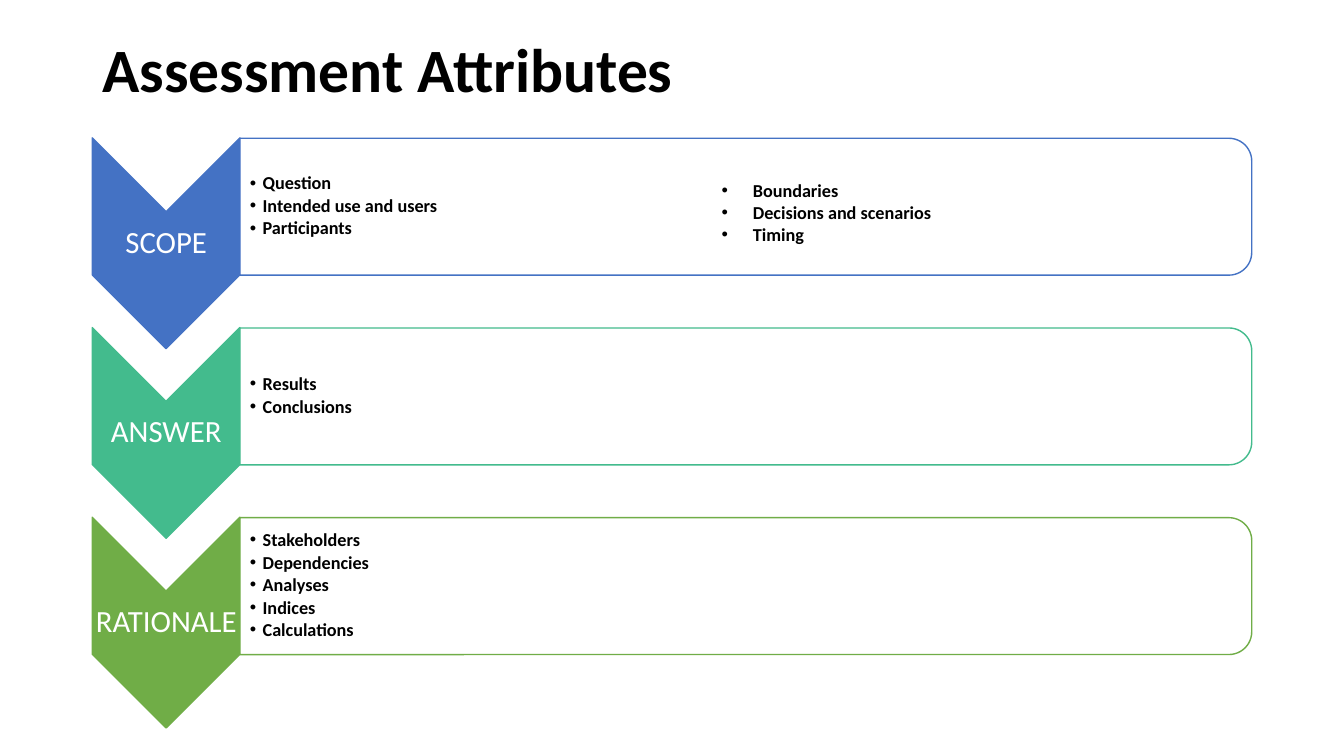
from lxml import etree
from pptx import Presentation, util as u
from pptx.dml.color import RGBColor
from pptx.enum import shapes, text
from pptx.oxml import ns

ROW_PITCH = 4.78
SECTIONS = [
    ("SCOPE", "4472C4", ["Question", "Intended use and users", "Participants"]),
    ("ANSWER", "43BB8D", ["Results", "Conclusions"]),
    ("RATIONALE", "70AD47",
     ["Stakeholders", "Dependencies", "Analyses", "Indices", "Calculations"]),
]
SCOPE_LIMITS = ["Boundaries", "Decisions and scenarios", "Timing"]


def add_turned_shape(preset, box, fill, line):
    """Add a preset shape turned a quarter clockwise; box is in cm before turning."""
    shape = slide.shapes.add_shape(preset, *map(u.Cm, box))
    shape.rotation = 90
    shape.shadow.inherit = False
    shape.fill.solid()
    shape.fill.fore_color.rgb = RGBColor.from_string(fill)
    shape.line.color.rgb = RGBColor.from_string(line)
    shape.line.width = u.Pt(1)
    return shape


def write_list(placeholder, items, box, indent, line_spacing, space_after):
    """Fill a placeholder with bullets, place it (cm) and bring it to the front."""
    placeholder.left, placeholder.top, placeholder.width, placeholder.height = map(u.Cm, box)
    placeholder.element.getparent().append(placeholder.element)
    frame = placeholder.text_frame
    frame.text = "\n".join(items)
    frame.auto_size = text.MSO_AUTO_SIZE.NONE
    for paragraph in frame.paragraphs:
        paragraph.line_spacing = line_spacing
        paragraph.space_before = u.Pt(0)
        paragraph.space_after = u.Pt(space_after)
        paragraph.font.name = "Calibri"
        paragraph.font.size = u.Pt(13)
        paragraph.font.bold = True
        paragraph.font.color.rgb = RGBColor.from_string("000000")
        properties = paragraph._p.get_or_add_pPr()
        properties.set("marL", str(u.Cm(indent)))
        properties.set("indent", str(-u.Cm(indent)))
        bullet = etree.Element(ns.qn("a:buChar"), char="•")
        properties.insert_element_before(bullet, "a:tabLst", "a:defRPr", "a:extLst")
    return frame


presentation = Presentation()
presentation.slide_width = u.Cm(33.87)
presentation.slide_height = u.Cm(19.05)
# The Comparison layout holds a title and four body placeholders.
slide = presentation.slides.add_slide(presentation.slide_layouts[4])
title, *bodies = slide.placeholders

title.left, title.top, title.width, title.height = map(u.Cm, (2.33, 0, 29.21, 3.68))
title.text_frame.text = "Assessment Attributes"
title.text_frame.vertical_anchor = text.MSO_ANCHOR.MIDDLE
heading = title.text_frame.paragraphs[0]
heading.alignment = text.PP_ALIGN.LEFT
heading.line_spacing = 0.9
heading.font.name = "Calibri"
heading.font.size = u.Pt(44)
heading.font.bold = True
heading.font.color.rgb = RGBColor.from_string("000000")

for row, (name, color, items) in enumerate(SECTIONS):
    offset = row * ROW_PITCH

    add_turned_shape(shapes.MSO_SHAPE.CHEVRON, (1.53, 4.27 + offset, 5.31, 3.72), color, color)
    label = slide.shapes.add_textbox(*map(u.Cm, (2.33, 5.33 + offset, 3.72, 1.6)))
    frame = label.text_frame
    frame.word_wrap = True
    frame.vertical_anchor = text.MSO_ANCHOR.MIDDLE
    frame.margin_left = frame.margin_right = u.Cm(0.04)
    frame.margin_top = frame.margin_bottom = u.Cm(0.04)
    frame.text = name
    paragraph = frame.paragraphs[0]
    paragraph.alignment = text.PP_ALIGN.CENTER
    paragraph.line_spacing = 0.9
    paragraph.font.name = "Calibri"
    paragraph.font.size = u.Pt(22)
    paragraph.font.color.rgb = RGBColor.from_string("FFFFFF")

    panel = add_turned_shape(shapes.MSO_SHAPE.ROUND_2_SAME_RECTANGLE,
                             (17.07, -7.54 + offset, 3.45, 25.5), "FFFFFF", color)
    white = panel.element.spPr.find(ns.qn("a:solidFill"))[0]
    etree.SubElement(white, ns.qn("a:alpha"), val="90000")

    frame = write_list(bodies[row], items, (6.05, 3.64 + offset, 25.32, 3.12), 0.32, 0.9, 2)
    frame.vertical_anchor = text.MSO_ANCHOR.MIDDLE
    frame.margin_left = u.Cm(0.25)
    frame.margin_top = frame.margin_right = frame.margin_bottom = u.Cm(0.02)

frame = write_list(bodies[3], SCOPE_LIMITS, (17.93, 4.39, 10.54, 1.93), 0.79, 1.0, 0)
frame.vertical_anchor = text.MSO_ANCHOR.TOP

presentation.save("out.pptx")
